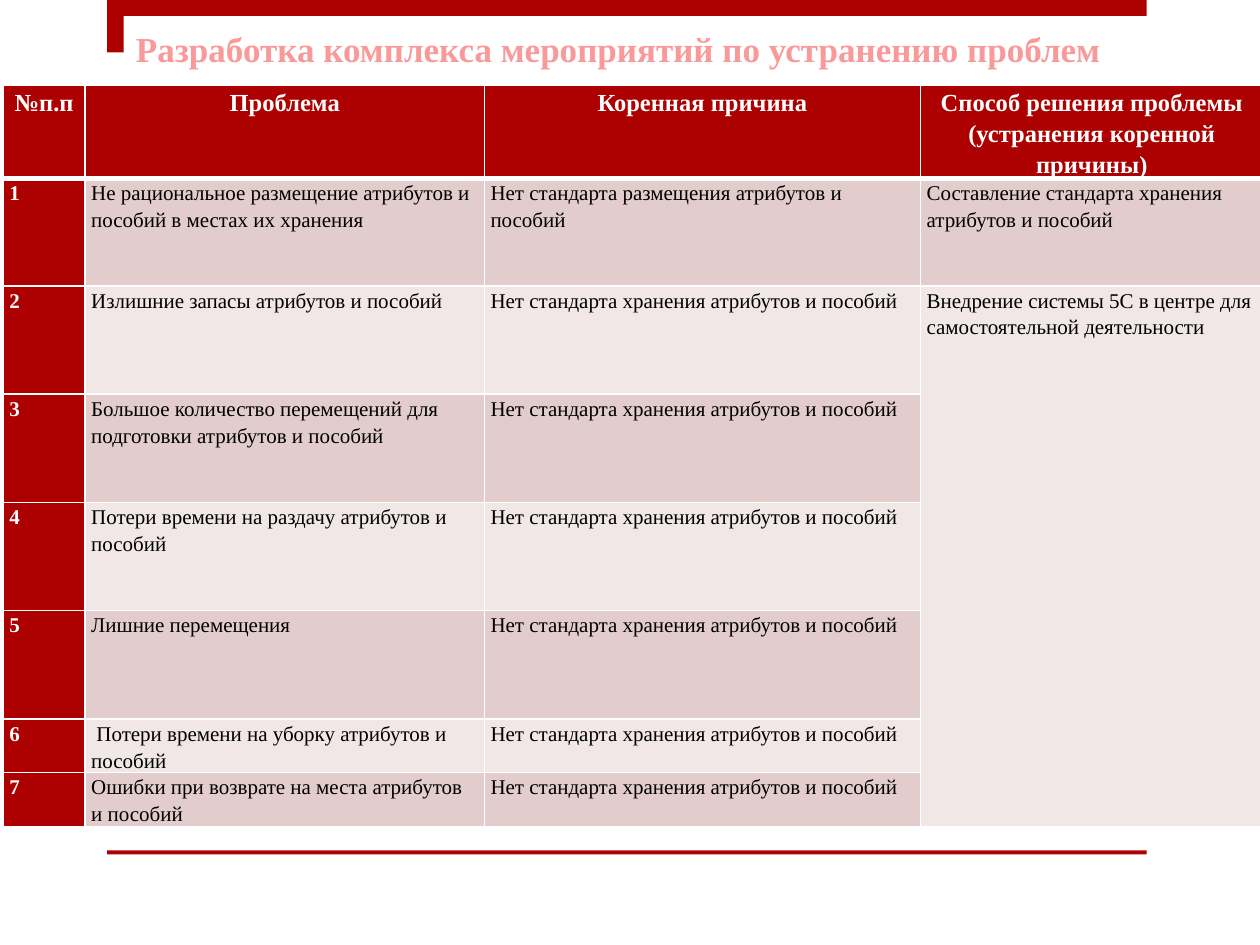
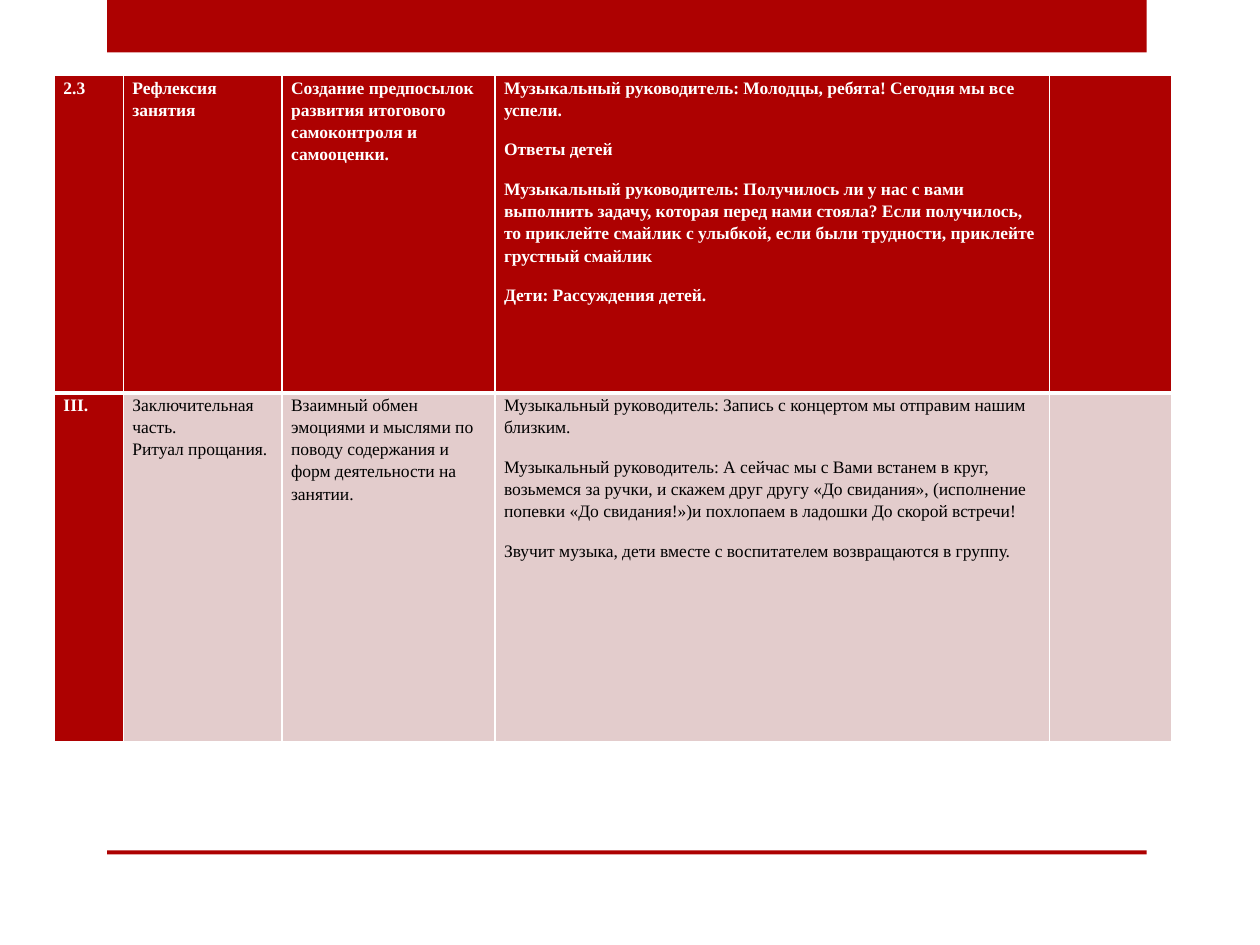
from dataclasses import dataclass

from lxml import etree
from pptx import Presentation
from pptx import util as u
from pptx.dml.color import RGBColor
from pptx.enum import shapes, text
from pptx.oxml import ns


@dataclass(frozen=True)
class Theme:
    accent: str = "AD0101"
    title: str = "FA9999"
    light: str = "FFFFFF"
    dark: str = "000000"
    bands: tuple = ("F1E7E7", "E3CCCC")
    font: str = "Times New Roman"
    title_size: float = 20
    thin: float = 1
    thick: float = 3


theme = Theme()


def add_block(page, left, top, width, height, color):
    block = page.shapes.add_shape(
        shapes.MSO_SHAPE.RECTANGLE, u.Pt(left), u.Pt(top), u.Pt(width), u.Pt(height))
    block.shadow.inherit = False
    block.fill.solid()
    block.fill.fore_color.rgb = RGBColor.from_string(color)
    block.line.fill.background()
    return block


def add_border(cell, side, width):
    """Draw one cell edge; side is L, R, T or B. Call it before filling the cell."""
    properties = cell._tc.get_or_add_tcPr()
    line = etree.SubElement(properties, ns.qn(f"a:ln{side}"), w=str(u.Pt(width)))
    fill = etree.SubElement(line, ns.qn("a:solidFill"))
    etree.SubElement(fill, ns.qn("a:srgbClr"), val=theme.light)


storage = "Нет стандарта хранения атрибутов и пособий"
problems = [
    ("№п.п", "Проблема", "Коренная причина",
     "Способ решения проблемы (устранения коренной причины)"),
    ("1", "Не рациональное размещение атрибутов и пособий в местах их хранения",
     "Нет стандарта размещения атрибутов и пособий",
     "Составление стандарта хранения атрибутов и пособий"),
    ("2", "Излишние запасы атрибутов и пособий", storage,
     "Внедрение системы 5С в центре для самостоятельной деятельности"),
    ("3", "Большое количество перемещений для подготовки атрибутов и пособий", storage, ""),
    ("4", "Потери времени на раздачу атрибутов и пособий", storage, ""),
    ("5", "Лишние перемещения", storage, ""),
    ("6", " Потери времени на уборку атрибутов и пособий", storage, ""),
    ("7", "Ошибки при возврате на места атрибутов и пособий", storage, ""),
]
lesson = [
    ("2.3", "Рефлексия занятия",
     "Создание предпосылок развития итогового самоконтроля и самооценки.",
     "Музыкальный руководитель: Молодцы, ребята! Сегодня мы все успели.\n"
     "Ответы детей\n"
     "Музыкальный руководитель: Получилось ли у нас с вами выполнить задачу, которая "
     "перед нами стояла? Если получилось, то приклейте смайлик с улыбкой, если были "
     "трудности, приклейте грустный смайлик\n"
     "Дети: Рассуждения детей.", ""),
    ("III.", "Заключительная часть.\nРитуал прощания.",
     "Взаимный обмен эмоциями и мыслями по поводу содержания и форм деятельности на занятии.",
     "Музыкальный руководитель: Запись с концертом мы отправим нашим близким.\n"
     "Музыкальный руководитель: А сейчас мы с Вами встанем в круг, возьмемся за ручки, "
     "и скажем друг другу «До свидания», (исполнение попевки «До свидания!»)и похлопаем "
     "в ладошки До скорой встречи!\n"
     "Звучит музыка, дети вместе с воспитателем возвращаются в группу.", ""),
]
slides = [
    dict(title="Разработка комплекса мероприятий по устранению проблем",
         rows=problems, left=1.8, top=48.8, inset=3.5,
         widths=(46.8, 228.2, 249.2, 195.8),
         heights=(41.8, 61.2, 61.9, 61.9, 61.9, 61.9, 27.4, 27.4),
         merge=((2, 3), (7, 3)), header_size=14, body_size=12,
         header_align=text.PP_ALIGN.CENTER, spaced_columns=()),
    dict(title=None, rows=lesson, left=31.2, top=43.2, inset=5.1,
         widths=(39.4, 90.7, 121.7, 316.8, 69.8), heights=(181.4, 199.4),
         merge=None, header_size=10, body_size=10,
         header_align=text.PP_ALIGN.LEFT, spaced_columns=(2, 3)),
]

deck = Presentation()
deck.slide_width, deck.slide_height = u.Pt(720), u.Pt(540)

for content in slides:
    page = deck.slides.add_slide(deck.slide_layouts[6])
    add_block(page, 61.2, 0, 594, 30, theme.accent)
    add_block(page, 61.2, 486, 594, 2.2, theme.accent)

    if content["title"]:
        box = add_block(page, 70.6, 9.2, 589.7, 33.8, theme.light)
        frame = box.text_frame
        frame.word_wrap = True
        frame.vertical_anchor = text.MSO_ANCHOR.BOTTOM
        frame.text = content["title"]
        para = frame.paragraphs[0]
        para.alignment = text.PP_ALIGN.LEFT
        span = para.runs[0]
        span.font.name = theme.font
        span.font.size = u.Pt(theme.title_size)
        span.font.bold = True
        span.font.color.rgb = RGBColor.from_string(theme.title)

    rows, widths, heights = content["rows"], content["widths"], content["heights"]
    table = page.shapes.add_table(
        len(rows), len(widths), u.Pt(content["left"]), u.Pt(content["top"]),
        u.Pt(sum(widths)), u.Pt(sum(heights))).table
    table.first_row = table.horz_banding = False
    for column, width in zip(table.columns, widths):
        column.width = u.Pt(width)
    for row, height in zip(table.rows, heights):
        row.height = u.Pt(height)

    for r, values in enumerate(rows):
        for c, value in enumerate(values):
            cell = table.cell(r, c)
            is_header = r == 0
            is_accent = is_header or c == 0
            for side in "LRTB":
                under_header = (r, side) in ((0, "B"), (1, "T"))
                add_border(cell, side, theme.thick if under_header else theme.thin)
            cell.fill.solid()
            cell.fill.fore_color.rgb = RGBColor.from_string(
                theme.accent if is_accent else theme.bands[r % 2])
            cell.margin_left = cell.margin_right = u.Pt(content["inset"])
            cell.margin_top = cell.margin_bottom = 0
            cell.text_frame.text = value
            for para in cell.text_frame.paragraphs:
                para.line_spacing = 1.15
                if c in content["spaced_columns"]:
                    para.space_after = u.Pt(10)
                if is_header:
                    para.alignment = content["header_align"]
                para.font.size = u.Pt(content["header_size" if is_header else "body_size"])
                for span in para.runs:
                    span.font.name = theme.font
                    span.font.size = para.font.size
                    span.font.bold = is_accent
                    span.font.color.rgb = RGBColor.from_string(
                        theme.light if is_accent else theme.dark)

    if content["merge"]:
        first, last = content["merge"]
        table.cell(*first).merge(table.cell(*last))

deck.save("out.pptx")
